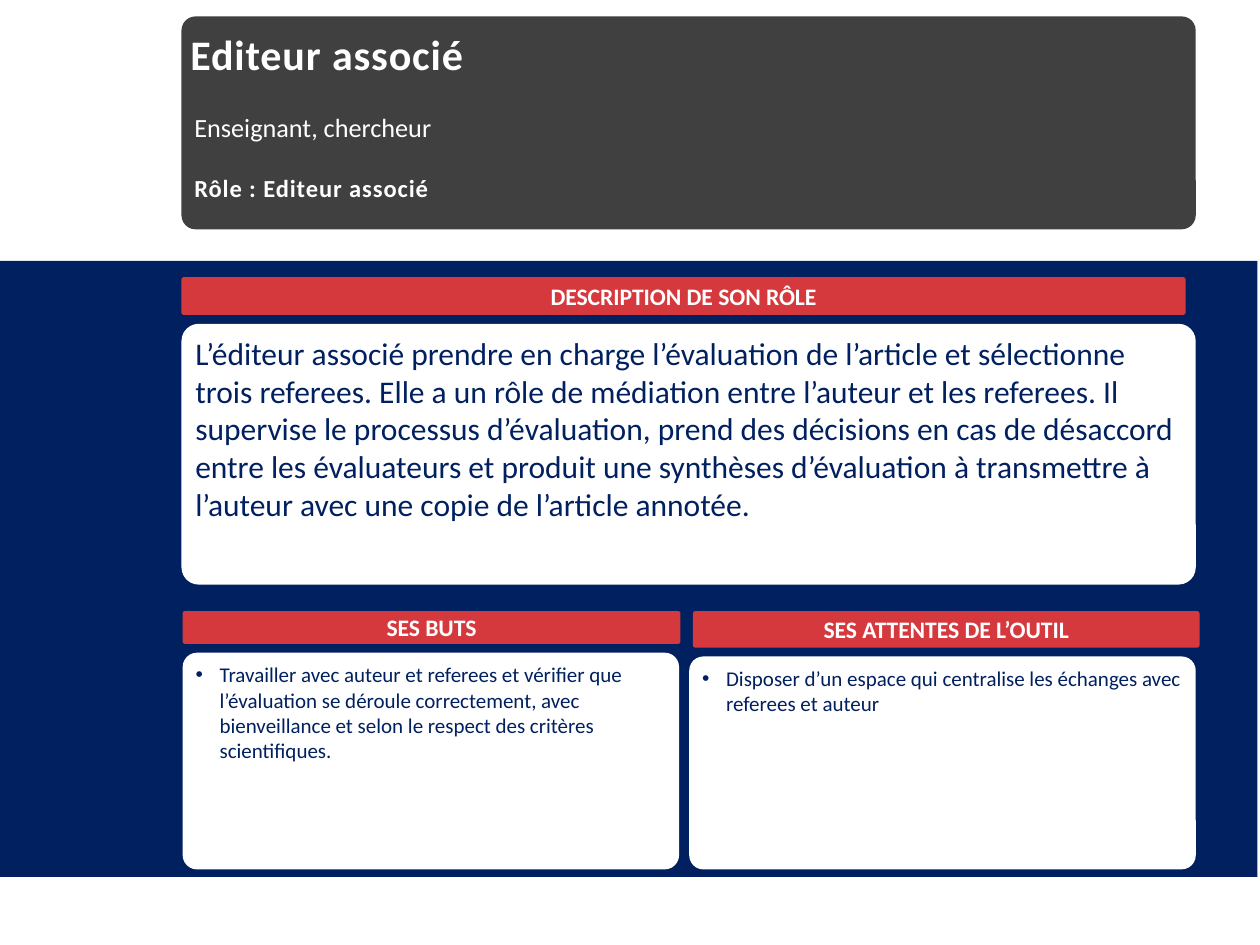
import pptx
import pptx.dml.color
import pptx.enum.shapes
import pptx.enum.text
import pptx.oxml
import pptx.oxml.ns
import pptx.util
from pptx.util import Inches

NAVY = "002060"
RED = "D5393D"
DARK = "404040"
WHITE = "FFFFFF"
CORNER = 0.066
SHAPES = pptx.enum.shapes.MSO_SHAPE
ALIGN = pptx.enum.text.PP_ALIGN
ANCHOR = pptx.enum.text.MSO_ANCHOR


def color(value):
    return pptx.dml.color.RGBColor.from_string(value)


def place(box, left, top, width, height):
    box.left, box.top = Inches(left), Inches(top)
    box.width, box.height = Inches(width), Inches(height)


def set_frame(box, anchor, top_inset=0.04):
    frame = box.text_frame
    frame.word_wrap = True
    frame.auto_size = pptx.enum.text.MSO_AUTO_SIZE.NONE
    frame.vertical_anchor = anchor
    frame.margin_left = frame.margin_right = Inches(0.07)
    frame.margin_top, frame.margin_bottom = Inches(top_inset), Inches(0.04)
    return frame


def write(para, text, size, ink, bold=False, align=ALIGN.LEFT, spacing=0, before=0):
    para.alignment = align
    para.space_before = pptx.util.Pt(before)
    span = para.add_run()
    span.text = text
    span.font.name = "Calibri"
    span.font.size = pptx.util.Pt(size)
    span.font.bold = bold
    span.font.color.rgb = color(ink)
    if spacing:
        span.font._element.set("spc", str(int(spacing * 100)))


def add_panel(page, kind, bounds, fill):
    box = page.shapes.add_shape(kind, *map(Inches, bounds))
    box.shadow.inherit = False
    box.fill.solid()
    box.fill.fore_color.rgb = color(fill)
    box.line.fill.background()
    return box


def add_card(page, bounds, fill):
    box = add_panel(page, SHAPES.ROUNDED_RECTANGLE, bounds, fill)
    box.adjustments[0] = CORNER
    return box


def bring_forward(page, box):
    page.shapes._spTree.append(box._element)


def add_header(page):
    card = add_card(page, (1.44, 0.13, 8.05, 1.69), DARK)
    frame = set_frame(card, ANCHOR.TOP, 0.72)
    write(frame.paragraphs[0], "Enseignant, chercheur", 15, WHITE)
    write(frame.add_paragraph(), "Rôle : Editeur associé", 14, WHITE,
          bold=True, spacing=0.5, before=17.5)

    title = page.shapes.title
    place(title, 1.44, 0.2, 8.05, 0.46)
    frame = set_frame(title, ANCHOR.MIDDLE)
    write(frame.paragraphs[0], "Editeur associé", 24, WHITE, bold=True, spacing=0.5)
    bring_forward(page, title)


def add_heading(page, bounds, text):
    box = add_card(page, bounds, RED)
    frame = set_frame(box, ANCHOR.MIDDLE)
    write(frame.paragraphs[0], text, 13.5, WHITE, bold=True, align=ALIGN.CENTER)


def add_description(page, bounds, text):
    box = add_card(page, bounds, WHITE)
    frame = set_frame(box, ANCHOR.TOP)
    write(frame.paragraphs[0], text, 18, NAVY)


def round_corners(box):
    geometry = pptx.oxml.parse_xml(
        f'<a:prstGeom {pptx.oxml.ns.nsdecls("a")} prst="roundRect"><a:avLst>'
        f'<a:gd name="adj" fmla="val {round(CORNER * 100000)}"/></a:avLst></a:prstGeom>')
    box._element.spPr.append(geometry)


def fill_list(page, box, bounds, items):
    place(box, *bounds)
    round_corners(box)
    box.fill.solid()
    box.fill.fore_color.rgb = color(WHITE)
    frame = set_frame(box, ANCHOR.TOP)
    for index, item in enumerate(items):
        para = frame.add_paragraph() if index else frame.paragraphs[0]
        properties = para._p.get_or_add_pPr()
        properties.set("marL", str(Inches(0.19)))
        properties.set("indent", str(-Inches(0.19)))
        bullet = pptx.oxml.parse_xml(
            f'<a:buChar {pptx.oxml.ns.nsdecls("a")} char="•"/>')
        properties.append(bullet)
        write(para, item, 12, NAVY)
    bring_forward(page, box)


def main():
    deck = pptx.Presentation()
    deck.slide_width, deck.slide_height = Inches(10), Inches(7.5)
    page = deck.slides.add_slide(deck.slide_layouts.get_by_name("Two Content"))

    add_panel(page, SHAPES.RECTANGLE, (0, 2.07, 9.98, 4.89), NAVY)
    add_header(page)
    add_heading(page, (1.44, 2.2, 7.97, 0.3), "DESCRIPTION DE SON RÔLE")
    add_description(
        page, (1.44, 2.57, 8.05, 2.07),
        "L’éditeur associé prendre en charge l’évaluation de l’article et sélectionne "
        "trois referees. Elle a un rôle de médiation entre l’auteur et les referees. Il "
        "supervise le processus d’évaluation, prend des décisions en cas de désaccord "
        "entre les évaluateurs et produit une synthèses d’évaluation à transmettre à "
        "l’auteur avec une copie de l’article annotée.")

    goals, expectations = page.placeholders[1], page.placeholders[2]
    fill_list(page, goals, (1.45, 5.18, 3.94, 1.72), [
        "Travailler avec auteur et referees et vérifier que l’évaluation se déroule "
        "correctement, avec bienveillance et selon le respect des critères scientifiques."])
    add_heading(page, (1.45, 4.85, 3.95, 0.26), "SES BUTS")
    fill_list(page, expectations, (5.47, 5.21, 4.02, 1.69), [
        "Disposer d’un espace qui centralise les échanges avec referees et auteur"])
    add_heading(page, (5.5, 4.85, 4.02, 0.29), "SES ATTENTES DE L’OUTIL")

    deck.save("out.pptx")


if __name__ == "__main__":
    main()
